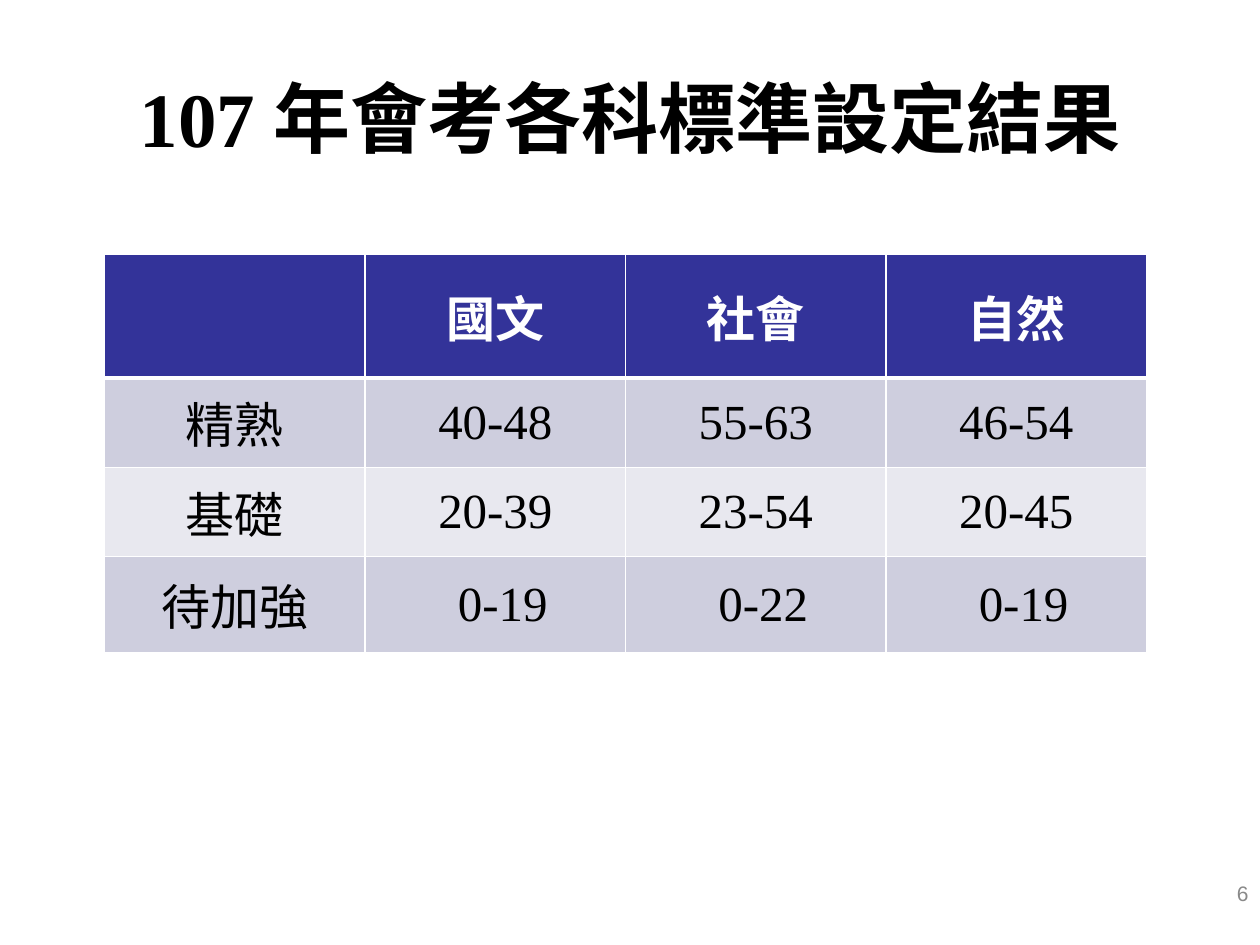
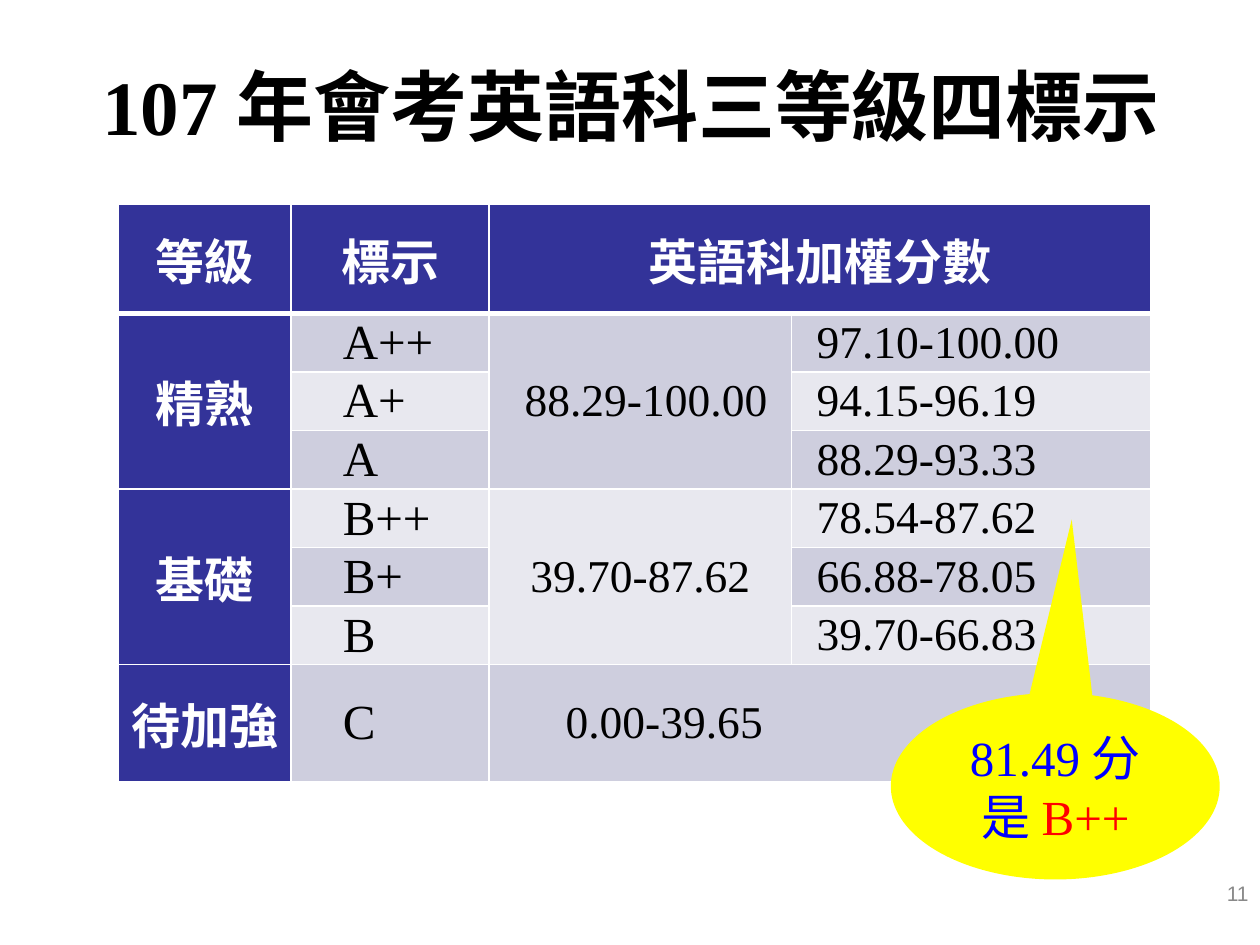
from dataclasses import dataclass

from lxml import etree
from pptx import Presentation
from pptx.dml.color import RGBColor
from pptx.enum.shapes import MSO_SHAPE
from pptx.enum.text import MSO_ANCHOR, MSO_AUTO_SIZE, PP_ALIGN
from pptx.oxml.ns import qn
from pptx.util import Cm, Pt

LEFT, CENTER, RIGHT = PP_ALIGN.LEFT, PP_ALIGN.CENTER, PP_ALIGN.RIGHT
MIDDLE = MSO_ANCHOR.MIDDLE
NO_AUTOFIT = MSO_AUTO_SIZE.NONE
OVAL_CALLOUT = MSO_SHAPE.OVAL_CALLOUT
TITLE_ONLY = 5


@dataclass(frozen=True)
class Theme:
    header: str = "333399"
    bands: tuple = ("E8E8EF", "CECEDE")
    white: str = "FFFFFF"
    black: str = "000000"
    grey: str = "898989"
    yellow: str = "FFFF00"
    blue: str = "0000FF"
    red: str = "FF0000"
    serif: str = "Times New Roman"
    sans: str = "Arial"
    east_asian: str = "Noto Sans CJK SC"
    title_size: int = 44
    text_size: int = 28
    score_size: int = 26
    number_size: int = 12
    rule: int = 1
    header_rule: int = 3


THEME = Theme()


def style_run(r, size, color, font=THEME.serif, bold=False):
    r.font.size, r.font.bold, r.font.name = Pt(size), bold, font
    r.font.color.rgb = RGBColor.from_string(color)
    ea = etree.Element(qn("a:ea"), typeface=THEME.east_asian)
    r.font._element.find(qn("a:latin")).addnext(ea)


def add_title(slide, box, text):
    title = slide.shapes.title
    title.left, title.top, title.width, title.height = map(Cm, box)
    tf = title.text_frame
    tf.text = text
    tf.auto_size, tf.vertical_anchor = NO_AUTOFIT, MIDDLE
    p = tf.paragraphs[0]
    p.alignment = CENTER
    style_run(p.runs[0], THEME.title_size, THEME.black, bold=True)


def add_page_number(slide, number):
    tf = slide.shapes.add_textbox(Cm(19.5), Cm(17.5), Cm(5.92), Cm(1.02)).text_frame
    tf.word_wrap, tf.vertical_anchor = True, MIDDLE
    p = tf.paragraphs[0]
    p.text, p.alignment = str(number), RIGHT
    style_run(p.runs[0], THEME.number_size, THEME.grey, THEME.sans)


def add_border(cell, side, width):
    ln = etree.SubElement(cell._tc.get_or_add_tcPr(), qn(f"a:ln{side}"), w=str(Pt(width)))
    fill = etree.SubElement(ln, qn("a:solidFill"))
    etree.SubElement(fill, qn("a:srgbClr"), val=THEME.white)


def add_grid(slide, left, top, widths, heights, texts, header_column=False):
    """Add a banded table; the first row, and the first column if asked, are headers."""
    frame = slide.shapes.add_table(len(heights), len(widths), Cm(left), Cm(top),
                                   Cm(sum(widths)), Cm(sum(heights)))
    table = frame.table
    for column, width in zip(table.columns, widths):
        column.width = Cm(width)
    for i, (row, height) in enumerate(zip(table.rows, heights)):
        row.height = Cm(height)
        for j, cell in enumerate(row.cells):
            is_header = i == 0 or (header_column and j == 0)
            for side in "LRTB":
                thick = (side == "B" and i == 0) or (side == "T" and i == 1)
                add_border(cell, side, THEME.header_rule if thick else THEME.rule)
            cell.fill.solid()
            color = THEME.header if is_header else THEME.bands[i % 2]
            cell.fill.fore_color.rgb = RGBColor.from_string(color)
            cell.vertical_anchor = MIDDLE
            cell.margin_left = cell.margin_right = Cm(0.05)
            cell.margin_top = cell.margin_bottom = 0
            cell.text = texts[i][j]
            p = cell.text_frame.paragraphs[0]
            p.alignment = CENTER
            for r in p.runs:
                style_run(r, THEME.text_size, THEME.white if is_header else THEME.black,
                          THEME.sans if i == 0 or j == 0 else THEME.serif, is_header)
    return table


def indent_cell(cell, margin, align=LEFT, size=THEME.text_size):
    cell.margin_left = Cm(margin)
    p = cell.text_frame.paragraphs[0]
    p.alignment = align
    for r in p.runs:
        r.font.size = Pt(size)


def add_score_callout(slide, box):
    s = slide.shapes.add_shape(OVAL_CALLOUT, *map(Cm, box))
    s.shadow.inherit = False
    s.adjustments[0], s.adjustments[1] = 0.05, -1.43
    s.fill.solid()
    s.fill.fore_color.rgb = RGBColor.from_string(THEME.yellow)
    s.line.fill.background()
    tf = s.text_frame
    tf.word_wrap, tf.vertical_anchor = True, MIDDLE
    p = tf.paragraphs[0]
    p.text, p.alignment = "81.49分\v是", CENTER
    for r in p.runs:
        style_run(r, THEME.text_size, THEME.blue)
    r = p.add_run()
    r.text = "B++"
    style_run(r, THEME.text_size, THEME.red)


def build_standards_slide(slide):
    add_title(slide, (2.31, 0.76, 20.8, 3.18), "107年會考各科標準設定結果")
    texts = [
        ("", "國文", "社會", "自然"),
        ("精熟", "40-48", "55-63", "46-54"),
        ("基礎", "20-39", "23-54", "20-45"),
        ("待加強", "0-19", "0-22", "0-19"),
    ]
    table = add_grid(slide, 2.11, 5.13, [5.25] * 4, [2.49, 1.8, 1.8, 1.93], texts)
    for j in range(1, 4):
        indent_cell(table.cell(3, j), 0.35, CENTER)
    add_page_number(slide, 6)


def build_english_slide(slide):
    add_title(slide, (1.3, 0.53, 22.86, 3.18), "107年會考英語科三等級四標示")
    texts = [
        ("等級", "標示", "英語科加權分數", ""),
        ("精熟", "A++", "88.29-100.00", "97.10-100.00"),
        ("", "A+", "", "94.15-96.19"),
        ("", "A", "", "88.29-93.33"),
        ("基礎", "B++", "39.70-87.62", "78.54-87.62"),
        ("", "B+", "", "66.88-78.05"),
        ("", "B", "", "39.70-66.83"),
        ("待加強", "C", "0.00-39.65", ""),
    ]
    table = add_grid(slide, 2.39, 4.11, [3.48, 3.99, 6.1, 7.24],
                     [2.21] + [1.18] * 6 + [2.36], texts, header_column=True)
    for i in range(1, 8):
        indent_cell(table.cell(i, 1), 1.04)
        indent_cell(table.cell(i, 3), 0.5, size=THEME.score_size)
    for i, margin, align in ((1, 0.28, CENTER), (4, 0.05, CENTER), (7, 1.54, LEFT)):
        indent_cell(table.cell(i, 2), margin, align, THEME.score_size)
    for i in (0, 7):
        table.cell(i, 2).merge(table.cell(i, 3))
    for i in (1, 4):
        for j in (0, 2):
            table.cell(i, j).merge(table.cell(i + 2, j))
    add_score_callout(slide, (17.96, 13.97, 6.63, 3.76))
    add_page_number(slide, 11)


def main():
    prs = Presentation()
    prs.slide_width, prs.slide_height = Cm(25.4), Cm(19.05)
    for build in (build_standards_slide, build_english_slide):
        build(prs.slides.add_slide(prs.slide_layouts[TITLE_ONLY]))
    prs.save("out.pptx")


if __name__ == "__main__":
    main()
